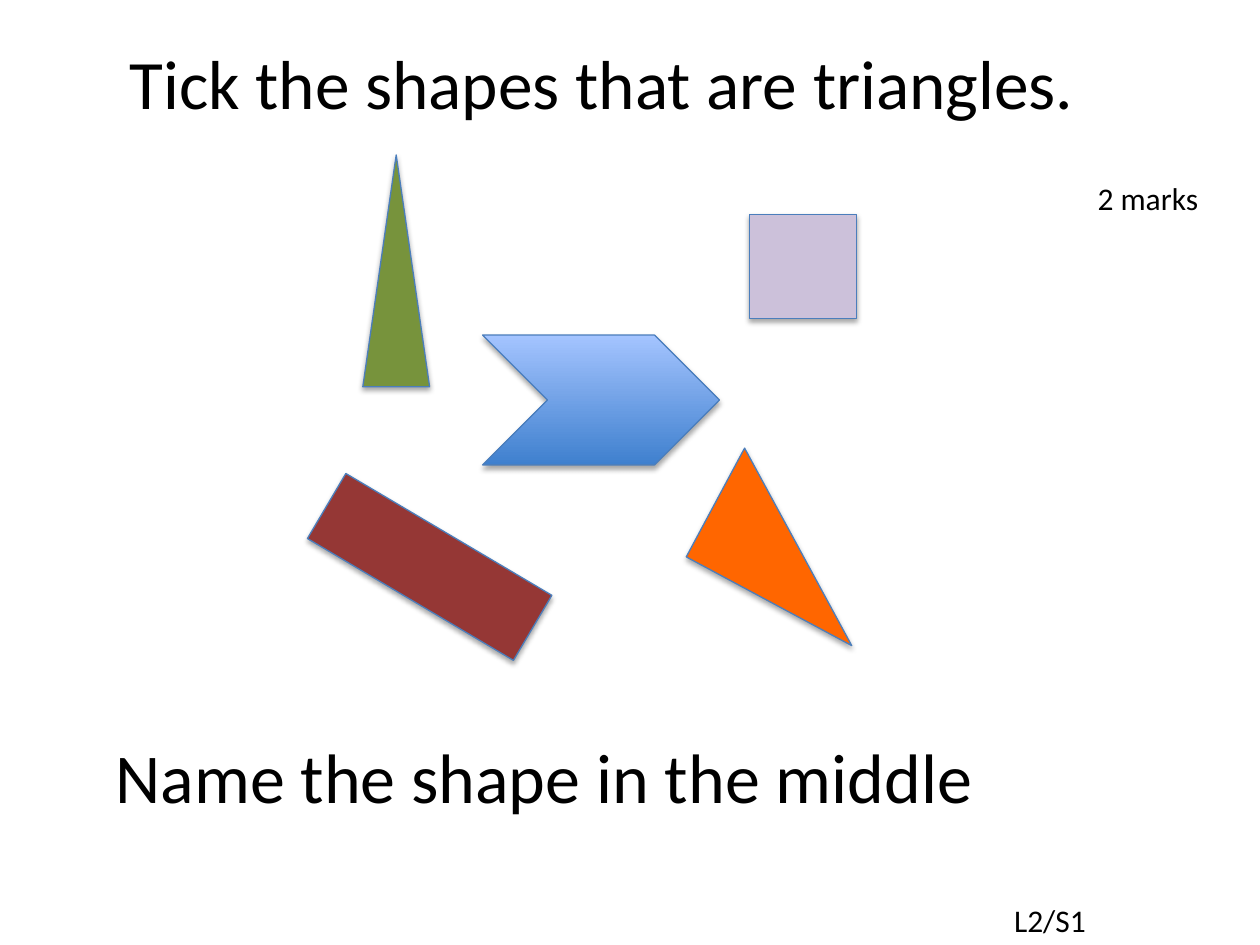
import pptx
import pptx.util
import pptx.dml.color
import pptx.enum.shapes
import pptx.enum.text
import pptx.oxml
import pptx.oxml.ns

Inches = pptx.util.Inches
Pt = pptx.util.Pt
RGB = pptx.dml.color.RGBColor.from_string
KIND = pptx.enum.shapes.MSO_SHAPE
ALIGN = pptx.enum.text.PP_ALIGN
qn = pptx.oxml.ns.qn
nsdecls = pptx.oxml.ns.nsdecls

COLOURS = {
    "text": "000000",
    "outline": "4B7EBC",
    "blue_dark": "3F80CE",
    "blue_light": "A4C4FF",
    "lilac": "CCC1DA",
    "green": "77933C",
    "maroon": "953735",
    "orange": "FF6600",
}

SHADOW = (
    f'<a:outerShdw {nsdecls("a")} blurRad="{Pt(3.1)}" dist="{Pt(1.8)}" '
    'dir="5400000" rotWithShape="0"><a:srgbClr val="000000">'
    '<a:alpha val="35000"/></a:srgbClr></a:outerShdw>'
)
TEXT_OUTLINE = (
    f'<a:ln {nsdecls("a")} w="{Pt(0.75)}"><a:solidFill>'
    f'<a:srgbClr val="{COLOURS["text"]}"/></a:solidFill></a:ln>'
)

presentation = pptx.Presentation()
presentation.slide_width = Inches(10)
presentation.slide_height = Inches(7.5)
slide = presentation.slides.add_slide(presentation.slide_layouts[6])


def add_text(wording, box, size, align=ALIGN.LEFT):
    textbox = slide.shapes.add_textbox(*map(Inches, box))
    frame = textbox.text_frame
    frame.word_wrap = True
    frame.text = wording
    paragraph = frame.paragraphs[0]
    paragraph.alignment = align
    font = paragraph.runs[0].font
    font.name = "Calibri"
    font.size = Pt(size)
    font.color.rgb = RGB(COLOURS["text"])
    return frame


add_text("L2/S1", (7.95, 7.1, 1.75, 0.4), 18)
question = add_text(
    "Tick the shapes that are triangles. ", (0.34, 0.32, 9, 1.25), 39.6, ALIGN.CENTER
)
question.margin_top = 0

choices = [
    (KIND.CHEVRON, (3.83, 2.66, 1.88, 1.03), 0, None),
    (KIND.RECTANGLE, (5.95, 1.7, 0.85, 0.83), 0, "lilac"),
    (KIND.ISOSCELES_TRIANGLE, (2.88, 1.23, 0.53, 1.84), 0, "green"),
    (KIND.RECTANGLE, (2.46, 4.2, 1.9, 0.6), 30.6, "maroon"),
    (KIND.RIGHT_TRIANGLE, (5.59, 3.85, 1.49, 0.98), 28.2, "orange"),
]
puzzle = slide.shapes.add_group_shape()
for kind, box, rotation, colour in choices:
    choice = puzzle.shapes.add_shape(kind, *map(Inches, box))
    choice.rotation = rotation
    if colour:
        choice.fill.solid()
        choice.fill.fore_color.rgb = RGB(COLOURS[colour])
    else:
        choice.fill.gradient()
        choice.fill.gradient_angle = 90
        for stop, shade in zip(choice.fill.gradient_stops, ("blue_dark", "blue_light")):
            stop.color.rgb = RGB(COLOURS[shade])
    choice.line.color.rgb = RGB(COLOURS["outline"])
    choice.line.width = Pt(0.75)
    choice.shadow.inherit = False
    effects = choice._element.spPr.find(qn("a:effectLst"))
    effects.append(pptx.oxml.parse_xml(SHADOW))

add_text("Name the shape in the middle", (0.82, 5.77, 7.76, 0.77), 40)
marks = add_text("2 marks", (8.45, 1.37, 1.32, 0.4), 18, ALIGN.CENTER)
marks_run = marks.paragraphs[0].runs[0]
marks_run._r.get_or_add_rPr().insert(0, pptx.oxml.parse_xml(TEXT_OUTLINE))

presentation.save("out.pptx")
